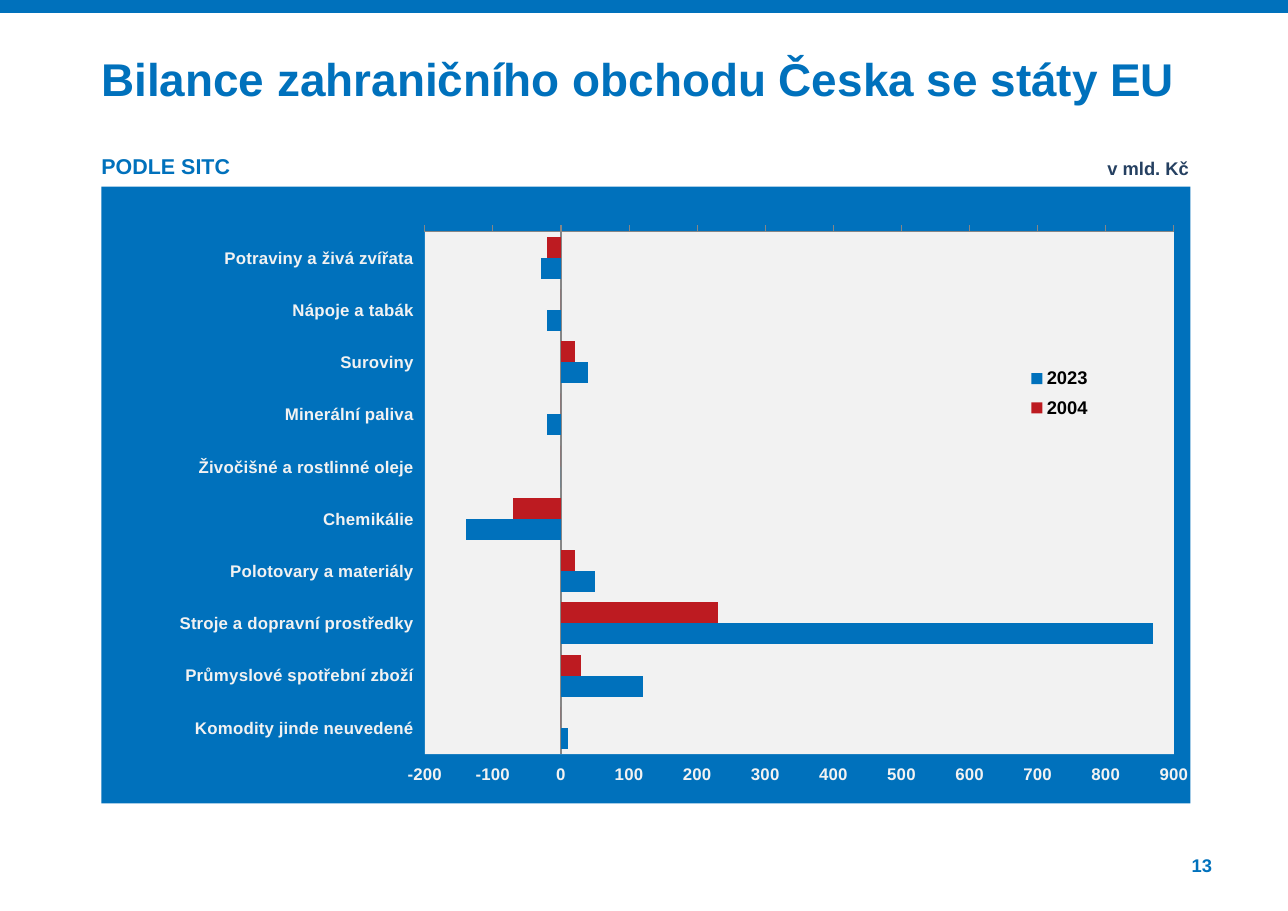
from lxml import etree
from pptx import Presentation
from pptx.chart.data import CategoryChartData
from pptx.dml.color import RGBColor
from pptx.enum.chart import (XL_CHART_TYPE as ChartType, XL_LEGEND_POSITION as LegendPos,
                             XL_TICK_LABEL_POSITION as LabelPos, XL_TICK_MARK as Tick)
from pptx.enum.shapes import MSO_SHAPE as Shape
from pptx.enum.text import PP_ALIGN as Align
from pptx.oxml.ns import qn
from pptx.util import Pt

COLORS = {"blue": "0071BC", "red": "BD1B21", "navy": "254061",
          "light": "F2F2F2", "black": "000000", "axis": "868686"}
PAGE_W, PAGE_H = 841.68, 595.44

BALANCE = [  # category, 2004, 2023
    ("Potraviny a živá zvířata", -20, -30),
    ("Nápoje a tabák", 0, -20),
    ("Suroviny", 20, 40),
    ("Minerální paliva", 0, -20),
    ("Živočišné a rostlinné oleje", 0, 0),
    ("Chemikálie", -70, -140),
    ("Polotovary a materiály", 20, 50),
    ("Stroje a dopravní prostředky", 230, 870),
    ("Průmyslové spotřební zboží", 30, 120),
    ("Komodity jinde neuvedené", 0, 10),
]


def color(name):
    return RGBColor.from_string(COLORS[name])


def style(font, size, name):
    font.name = "Arial"
    font.size = Pt(size)
    font.bold = True
    font.color.rgb = color(name)


def add_text(page, box, lines, name, align=Align.LEFT, inset=(0, 0)):
    """Write (text, size) lines into a text box and return its paragraphs."""
    frame = page.shapes.add_textbox(*map(Pt, box)).text_frame
    frame.word_wrap = True
    frame.margin_left = frame.margin_right = Pt(inset[0])
    frame.margin_top = frame.margin_bottom = Pt(inset[1])
    frame.text = "\n".join(text for text, size in lines)
    for para, (text, size) in zip(frame.paragraphs, lines):
        para.alignment = align
        for span in para.runs:
            style(span.font, size, name)
    return frame.paragraphs


def add_frame(page, box):
    """Top band and page number."""
    left, top, width, height = box
    band = page.shapes.add_shape(Shape.RECTANGLE, Pt(left), Pt(top), Pt(width), Pt(8.5))
    band.shadow.inherit = False
    band.fill.solid()
    band.fill.fore_color.rgb = color("blue")
    band.line.fill.background()
    add_text(page, (left + width - 105.84, top + height - 37.2, 56.16, 15),
             [("13", 12)], "blue", Align.RIGHT)


def add_heading(page, box):
    """Title, subtitle and unit."""
    left, top, width, height = box
    paras = add_text(page, box, [("Bilance zahraničního obchodu Česka se státy EU", 30),
                                 ("PODLE SITC", 14)], "blue")
    for para in paras:
        para.line_spacing = 0.9
    paras[1].space_before = Pt(32.5)
    add_text(page, (left + width - 108, top + 62.2, 113.76, 27.36),
             [("v mld. Kč", 12)], "navy", Align.RIGHT, (7.2, 3.6))


def set_layout(element, sizes, inner=False):
    """Place a chart part by fractions of the chart area."""
    for old in element.findall(qn("c:layout")):
        element.remove(old)
    layout = etree.Element(qn("c:layout"))
    manual = etree.SubElement(layout, qn("c:manualLayout"))
    settings = [("layoutTarget", "inner")] if inner else []
    settings += [("xMode", "edge"), ("yMode", "edge")]
    settings += zip("xywh", sizes)
    for tag, value in settings:
        etree.SubElement(manual, qn("c:" + tag)).set("val", str(value))
    if inner:
        element.insert(0, layout)
    else:
        element.find(qn("c:legendPos")).addnext(layout)


def area_fill(name):
    """Build the fill of a chart or plot area, without an outline."""
    props = etree.Element(qn("c:spPr"))
    solid = etree.SubElement(props, qn("a:solidFill"))
    etree.SubElement(solid, qn("a:srgbClr")).set("val", COLORS[name])
    line = etree.SubElement(props, qn("a:ln"))
    etree.SubElement(line, qn("a:noFill"))
    return props


def add_balance_chart(page, box):
    data = CategoryChartData()
    names, old, new = zip(*BALANCE)
    data.categories = names
    data.add_series("2004", old)
    data.add_series("2023", new)
    chart = page.shapes.add_chart(ChartType.BAR_CLUSTERED, *map(Pt, box), data).chart
    chart.has_title = False
    chart.font.name = "Calibri"
    chart.font.size = Pt(10)
    chart.font.color.rgb = color("black")

    # Bars
    plot = chart.plots[0]
    plot.gap_width = 49
    plot.overlap = 0
    plot.vary_by_categories = False
    for series, name in zip(plot.series, ("red", "blue")):
        series.invert_if_negative = False
        series.format.fill.solid()
        series.format.fill.fore_color.rgb = color(name)

    # Axes
    categories, values = chart.category_axis, chart.value_axis
    categories.reverse_order = True
    categories.major_tick_mark = Tick.NONE
    categories.tick_label_position = LabelPos.LOW
    values.minimum_scale, values.maximum_scale, values.major_unit = -200, 900, 100
    values.has_major_gridlines = False
    values.major_tick_mark = Tick.OUTSIDE
    values.tick_label_position = LabelPos.HIGH
    for axis in (categories, values):
        axis.minor_tick_mark = Tick.NONE
        axis.format.line.color.rgb = color("axis")
        axis.format.line.width = Pt(0.75)
        style(axis.tick_labels.font, 11, "light")

    # Legend, narrow enough to stack its entries
    chart.has_legend = True
    chart.legend.position = LegendPos.RIGHT
    chart.legend.include_in_layout = False
    style(chart.legend.font, 12, "black")
    set_layout(chart.legend._element, (0.84, 0.28, 0.08, 0.11))

    # Backgrounds and plot position
    space = chart._chartSpace
    area = space.chart.plotArea
    set_layout(area, (0.297, 0.073, 0.688, 0.847), inner=True)
    area.append(area_fill("light"))
    space.chart.addnext(area_fill("blue"))


def main():
    deck = Presentation()
    deck.slide_width, deck.slide_height = Pt(PAGE_W), Pt(PAGE_H)
    page = deck.slides.add_slide(deck.slide_layouts[6])
    add_frame(page, (0, 0, PAGE_W, PAGE_H))
    add_heading(page, (66.24, 37.2, 712.08, 51.12))
    add_balance_chart(page, (66.24, 122, 711.6, 403.2))
    deck.save("out.pptx")


if __name__ == "__main__":
    main()
